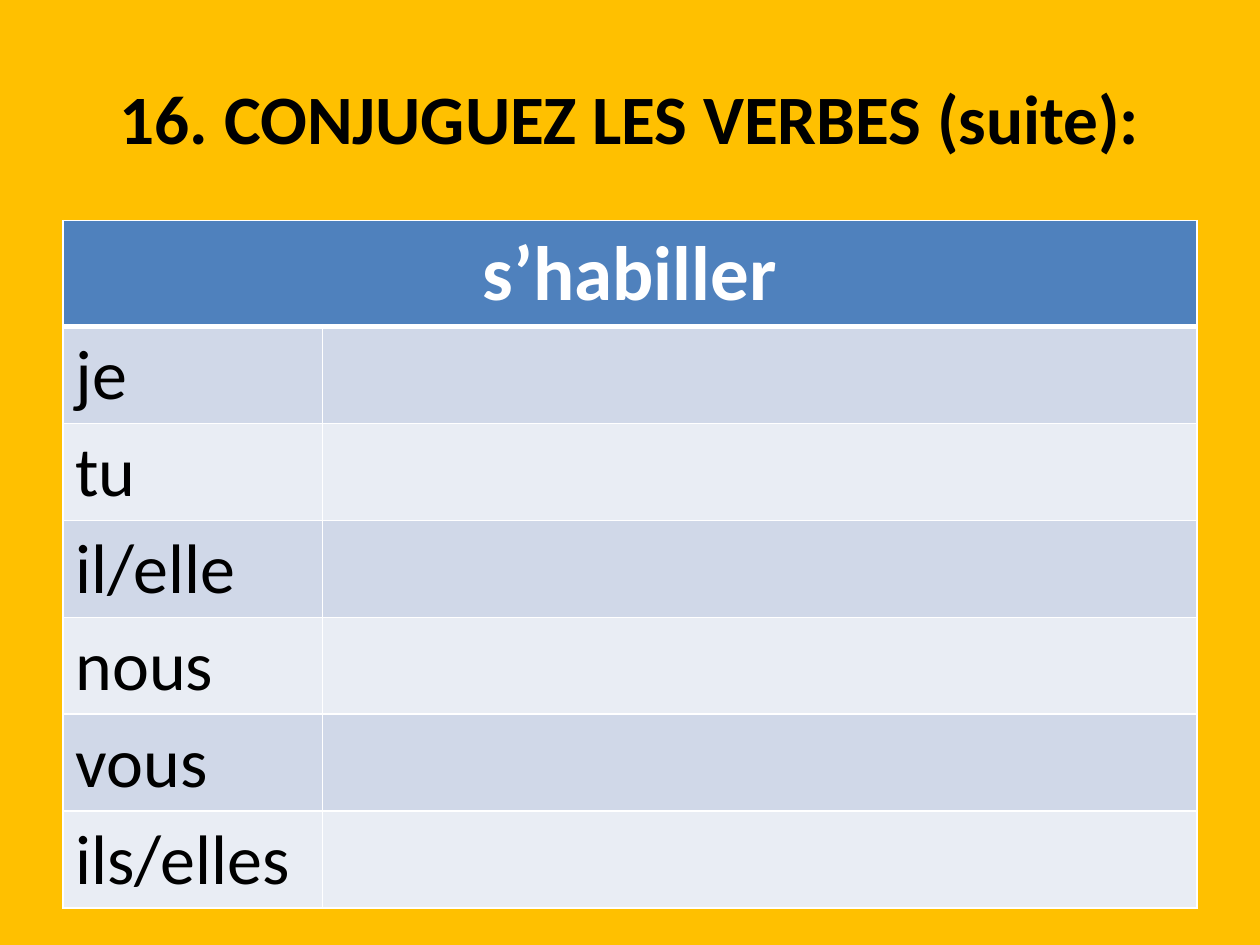
from lxml import etree
from pptx import Presentation
from pptx.dml.color import RGBColor
from pptx.enum.text import MSO_ANCHOR, PP_ALIGN
from pptx.oxml.ns import qn
from pptx.util import Inches, Pt

TITLE = "16. CONJUGUEZ LES VERBES\u00a0(suite):"
VERB = "s’habiller"
PRONOUNS = ["je", "tu", "il/elle", "nous", "vous", "ils/elles"]
COL_WIDTHS = [2.06, 6.94]
HEADER_H, ROW_H = 0.84, 0.77
BANDS = ["D0D8E8", "E9EDF4"]
HEADER_FILL, BACKGROUND = "4F81BD", "FFC000"
BLACK, WHITE = "000000", "FFFFFF"


def color(value):
    return RGBColor.from_string(value)


def write(tf, text, size, font_color, bold=False, align=PP_ALIGN.LEFT):
    p = tf.paragraphs[0]
    p.alignment = align
    r = p.add_run()
    r.text = text
    r.font.name = "Calibri"
    r.font.size = Pt(size)
    r.font.bold = bold
    r.font.color.rgb = color(font_color)


def style_cell(cell, fill, top=1, bottom=1):
    cell.fill.solid()
    cell.fill.fore_color.rgb = color(fill)
    tcPr = cell._tc.get_or_add_tcPr()
    sides = {"lnL": 1, "lnR": 1, "lnT": top, "lnB": bottom}
    for i, (side, width) in enumerate(sides.items()):
        ln = etree.Element(qn(f"a:{side}"), w=str(Pt(width)))
        solid = etree.SubElement(ln, qn("a:solidFill"))
        etree.SubElement(solid, qn("a:srgbClr"), val=WHITE)
        tcPr.insert(i, ln)


def add_title(s):
    tf = s.shapes.add_textbox(Inches(0.5), Inches(0.3), Inches(9), Inches(1.25)).text_frame
    tf.word_wrap = True
    tf.vertical_anchor = MSO_ANCHOR.MIDDLE
    write(tf, TITLE, 39.6, BLACK, True, PP_ALIGN.CENTER)


def add_conjugation_table(s):
    heights = [HEADER_H] + [ROW_H] * len(PRONOUNS)
    table = s.shapes.add_table(len(heights), len(COL_WIDTHS), Inches(0.5), Inches(1.75),
                               Inches(sum(COL_WIDTHS)), Inches(sum(heights))).table
    for col, width in zip(table.columns, COL_WIDTHS):
        col.width = Inches(width)
    for row, height in zip(table.rows, heights):
        row.height = Inches(height)

    header = table.cell(0, 0)
    header.merge(table.cell(0, 1))
    for cell in table.rows[0].cells:
        style_cell(cell, HEADER_FILL, bottom=3)
    write(header.text_frame, VERB, 44, WHITE, True, PP_ALIGN.CENTER)

    for i, pronoun in enumerate(PRONOUNS):
        for cell in table.rows[i + 1].cells:
            style_cell(cell, BANDS[i % 2], top=1 if i else 3)
        write(table.cell(i + 1, 0).text_frame, pronoun, 40, BLACK)


def main():
    prs = Presentation()
    prs.slide_width, prs.slide_height = Inches(10), Inches(7.5)
    s = prs.slides.add_slide(prs.slide_layouts[6])
    s.background.fill.solid()
    s.background.fill.fore_color.rgb = color(BACKGROUND)
    add_title(s)
    add_conjugation_table(s)
    prs.save("out.pptx")


if __name__ == "__main__":
    main()
